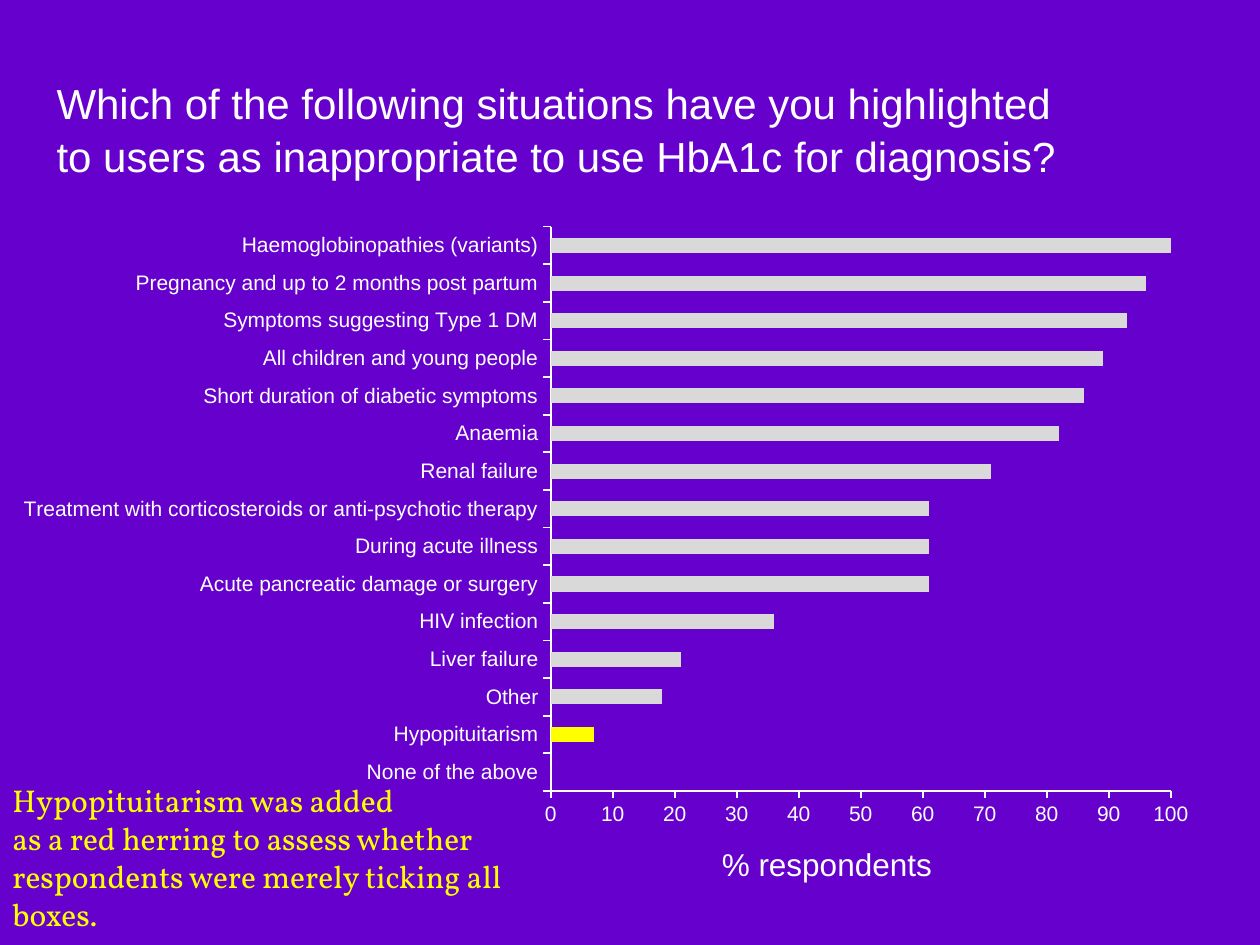
from dataclasses import dataclass

from lxml import etree
from pptx import Presentation
from pptx.chart.data import CategoryChartData
from pptx.dml.color import RGBColor
from pptx.enum.chart import XL_CHART_TYPE as ChartType, XL_TICK_MARK as Tick
from pptx.oxml.ns import qn
from pptx.util import Inches, Pt

PURPLE = RGBColor(0x66, 0x00, 0xCC)
WHITE = RGBColor(0xFF, 0xFF, 0xFF)
GREY = RGBColor(0xD9, 0xD9, 0xD9)
YELLOW = RGBColor(0xFF, 0xFF, 0x00)
SANS, SERIF = "Arial", "Vollkorn"


@dataclass
class Label:
    left: float
    top: float
    width: float
    height: float
    lines: list[str]
    size: int
    face: str
    color: RGBColor
    wrap: bool = True
    spacing: float = 1.0


LABELS = [
    Label(0.35, 0.55, 8.25, 1,
          ["Which of the following situations have you highlighted "
           "to users as inappropriate to use HbA1c for diagnosis?"],
          24, SANS, WHITE, spacing=1.05),
    Label(5.63, 6.66, 1.88, 0.4, ["% respondents"], 18, SANS, WHITE, wrap=False),
    Label(0, 6.15, 5, 1.31,
          ["Hypopituitarism was added", "as a red herring to assess whether",
           "respondents were merely ticking all", "boxes."],
          18, SERIF, YELLOW),
]

# Percent of respondents, from the bottom bar up
SHARES = {
    "None of the above": 0,
    "Hypopituitarism": 7,
    "Other": 18,
    "Liver failure": 21,
    "HIV infection": 36,
    "Acute pancreatic damage or surgery": 61,
    "During acute illness": 61,
    "Treatment with corticosteroids or anti-psychotic therapy": 61,
    "Renal failure": 71,
    "Anaemia": 82,
    "Short duration of diabetic symptoms": 86,
    "All children and young people": 89,
    "Symptoms suggesting Type 1 DM": 93,
    "Pregnancy and up to 2 months post partum": 96,
    "Haemoglobinopathies (variants)": 100,
}


def set_font(font, size: int, face: str, color: RGBColor) -> None:
    font.size, font.name = Pt(size), face
    font.color.rgb = color


def add_label(slide, label: Label) -> None:
    box = slide.shapes.add_textbox(Inches(label.left), Inches(label.top),
                                   Inches(label.width), Inches(label.height))
    frame = box.text_frame
    frame.word_wrap = label.wrap
    frame.text = "\n".join(label.lines)
    for par in frame.paragraphs:
        par.line_spacing = label.spacing
        set_font(par.font, label.size, label.face, label.color)


def style_axis(axis) -> None:
    axis.has_major_gridlines = False
    axis.major_tick_mark, axis.minor_tick_mark = Tick.OUTSIDE, Tick.NONE
    axis.format.line.color.rgb = WHITE
    axis.format.line.width = Pt(1)
    set_font(axis.tick_labels.font, 12, SANS, WHITE)


def place_plot(chart, x: float, y: float, w: float, h: float) -> None:
    """Fix the inner plot area, in fractions of the chart."""
    area = chart.plots[0]._element.getparent()
    for old in area.findall(qn("c:layout")):
        area.remove(old)
    layout = etree.Element(qn("c:layout"))
    area.insert(0, layout)
    manual = etree.SubElement(layout, qn("c:manualLayout"))
    parts = {"layoutTarget": "inner", "xMode": "edge", "yMode": "edge",
             "x": x, "y": y, "w": w, "h": h}
    for tag, val in parts.items():
        etree.SubElement(manual, qn(f"c:{tag}")).set("val", str(val))


def add_bars(slide) -> None:
    data = CategoryChartData(number_format="0")
    data.categories = list(SHARES)
    data.add_series("Series 1", list(SHARES.values()))
    chart = slide.shapes.add_chart(ChartType.BAR_CLUSTERED, Inches(0), Inches(1.7),
                                   Inches(9.65), Inches(4.95), data).chart
    chart.has_legend = chart.has_title = False
    set_font(chart.font, 10, SERIF, WHITE)

    # Axes
    style_axis(chart.category_axis)
    scale = chart.value_axis
    style_axis(scale)
    scale.minimum_scale, scale.maximum_scale, scale.major_unit = 0, 100, 10
    scale.tick_labels.number_format = "0"
    scale.tick_labels.number_format_is_linked = False

    # Bars, with the red herring picked out
    plot = chart.plots[0]
    plot.gap_width, plot.vary_by_categories = 150, False
    bars = plot.series[0]
    herring = bars.points[list(SHARES).index("Hypopituitarism")]
    for part, color in ((bars, GREY), (herring, YELLOW)):
        part.format.fill.solid()
        part.format.fill.fore_color.rgb = color
    place_plot(chart, 0.453, 0.02, 0.51, 0.905)


def main() -> None:
    deck = Presentation()
    deck.slide_width, deck.slide_height = Inches(10), Inches(7.5)
    slide = deck.slides.add_slide(deck.slide_layouts[6])
    slide.background.fill.solid()
    slide.background.fill.fore_color.rgb = PURPLE

    add_bars(slide)
    for label in LABELS:
        add_label(slide, label)
    deck.save("out.pptx")


if __name__ == "__main__":
    main()
